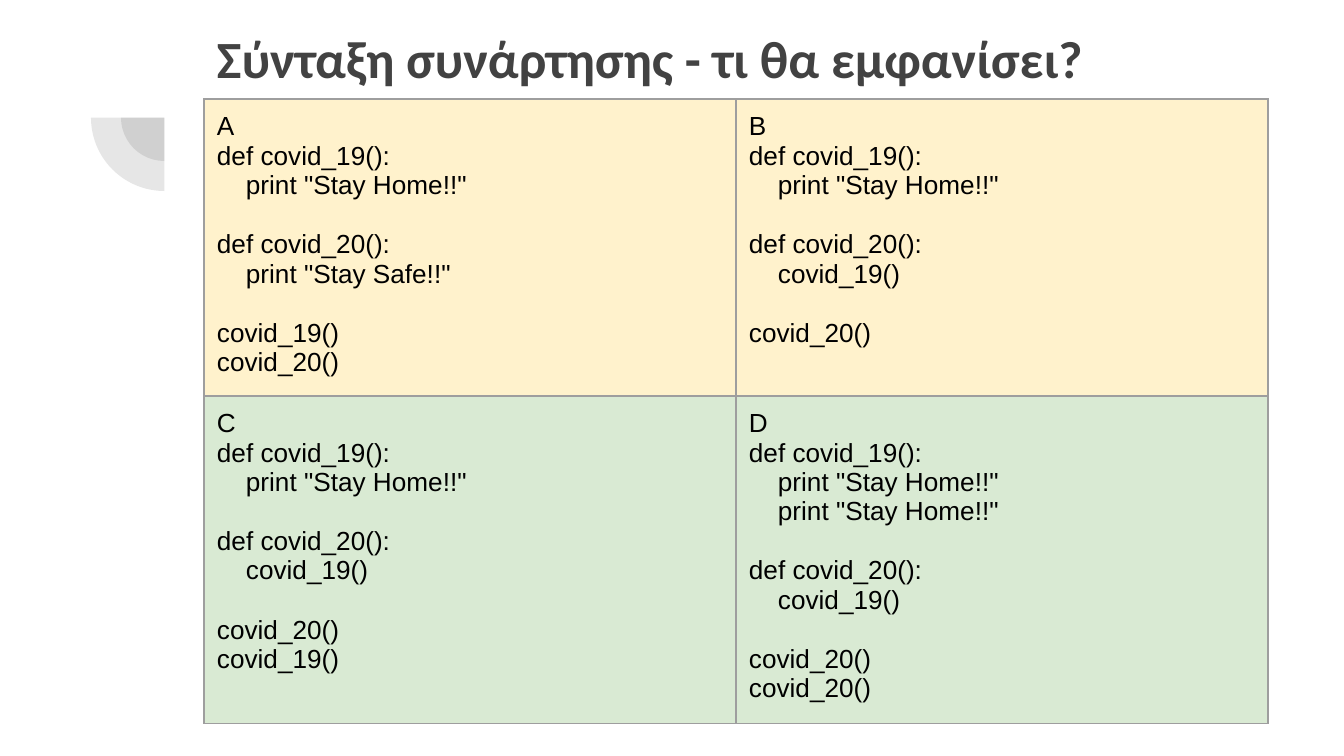
from lxml import etree
from pptx import Presentation
from pptx.dml.color import RGBColor
from pptx.enum.shapes import MSO_SHAPE
from pptx.enum.text import MSO_ANCHOR, MSO_AUTO_SIZE, PP_ALIGN
from pptx.oxml.ns import qn
from pptx.util import Pt

PIE = MSO_SHAPE.PIE
TOP = MSO_ANCHOR.TOP
LEFT = PP_ALIGN.LEFT
FIXED = MSO_AUTO_SIZE.NONE

SCALE = 914400 / 134.4
PAD = 13
LINE = 16  # height of one code line in points
COLORS = {"dark": "424242", "code": "000000", "edge": "9E9E9E",
          "cream": "FFF2CC", "green": "D9EAD3"}

HEAD = "Σύνταξη συνάρτησης - τι θα εμφανίσει?"
HOME = '    print "Stay Home!!"'
SAFE = '    print "Stay Safe!!"'
ONE, TWO = "covid_19()", "covid_20()"
DEF1, DEF2 = f"def {ONE}:", f"def {TWO}:"
CALL = "    " + ONE

# Each cell is a list of code blocks, set apart by one line
ROWS = [
    ("cream", 297, [
        [["A", DEF1, HOME], [DEF2, SAFE], [ONE, TWO]],
        [["B", DEF1, HOME], [DEF2, CALL], [TWO]],
    ]),
    ("green", 328, [
        [["C", DEF1, HOME], [DEF2, CALL], [TWO, ONE]],
        [["D", DEF1, HOME, HOME], [DEF2, CALL], [TWO, TWO]],
    ]),
]


def px(num):
    return round(num * SCALE)


def color(name):
    return RGBColor.from_string(COLORS[name])


def style(font, name, size, tint, bold=False):
    font.name, font.size, font.bold = name, Pt(size), bold
    font.color.rgb = color(tint)


def pad(item):
    item.margin_left = item.margin_right = px(PAD)
    item.margin_top = item.margin_bottom = px(PAD)


def add_title(slide, x, y, w, h):
    title = slide.shapes.title
    title.left, title.top, title.width, title.height = map(px, (x, y, w, h))
    frame = title.text_frame
    frame.text = HEAD
    frame.word_wrap = True
    frame.auto_size = FIXED
    frame.vertical_anchor = TOP
    pad(frame)
    para = frame.paragraphs[0]
    para.alignment = LEFT
    style(para.runs[0].font, "Calibri", 28, "dark", True)


def add_fans(slide, x, y, size):
    """Two quarter discs that share the centre of the box."""
    for gap in (30, 0):
        side = size - 2 * gap
        fan = slide.shapes.add_shape(
            PIE, px(x + gap), px(y + gap), px(side), px(side))
        fan.adjustments[0], fan.adjustments[1] = 108, 162
        fan.rotation = 270
        fan.shadow.inherit = False
        fan.line.fill.background()
        fan.fill.solid()
        fan.fill.fore_color.rgb = color("dark")
        tint = fan.fill._xPr.find(".//" + qn("a:srgbClr"))
        etree.SubElement(tint, qn("a:alpha"), val="13000")


def add_edges(cell):
    props = cell._tc.get_or_add_tcPr()
    for side in ("lnL", "lnR", "lnT", "lnB"):
        edge = etree.SubElement(props, qn("a:" + side), w=str(Pt(0.75)))
        fill = etree.SubElement(edge, qn("a:solidFill"))
        etree.SubElement(fill, qn("a:srgbClr"), val=COLORS["edge"])


def fill_cell(cell, blocks, tint):
    add_edges(cell)
    cell.fill.solid()
    cell.fill.fore_color.rgb = color(tint)
    cell.vertical_anchor = TOP
    pad(cell)
    frame = cell.text_frame
    frame.text = "\n".join(line for block in blocks for line in block)
    paras = iter(frame.paragraphs)
    for num, block in enumerate(blocks):
        for pos in range(len(block)):
            para = next(paras)
            if num and pos == 0:
                para.space_before = Pt(LINE)
            style(para.runs[0].font, "Arial", 14, "code")


def add_grid(slide, x, y, w):
    high = sum(row[1] for row in ROWS)
    table = slide.shapes.add_table(
        len(ROWS), 2, px(x), px(y), px(w), px(high)).table
    table.first_row = table.horz_banding = False
    for col in table.columns:
        col.width = px(w / 2)
    for r, (tint, tall, cells) in enumerate(ROWS):
        table.rows[r].height = px(tall)
        for c, blocks in enumerate(cells):
            fill_cell(table.cell(r, c), blocks, tint)


def main():
    deck = Presentation()
    deck.slide_width, deck.slide_height = px(1344), px(756)
    slide = deck.slides.add_slide(deck.slide_layouts[5])
    add_fans(slide, 91, 44, 147)
    add_title(slide, 204, 13, 1034, 94)
    add_grid(slide, 204, 99, 1064)
    deck.save("out.pptx")


if __name__ == "__main__":
    main()
